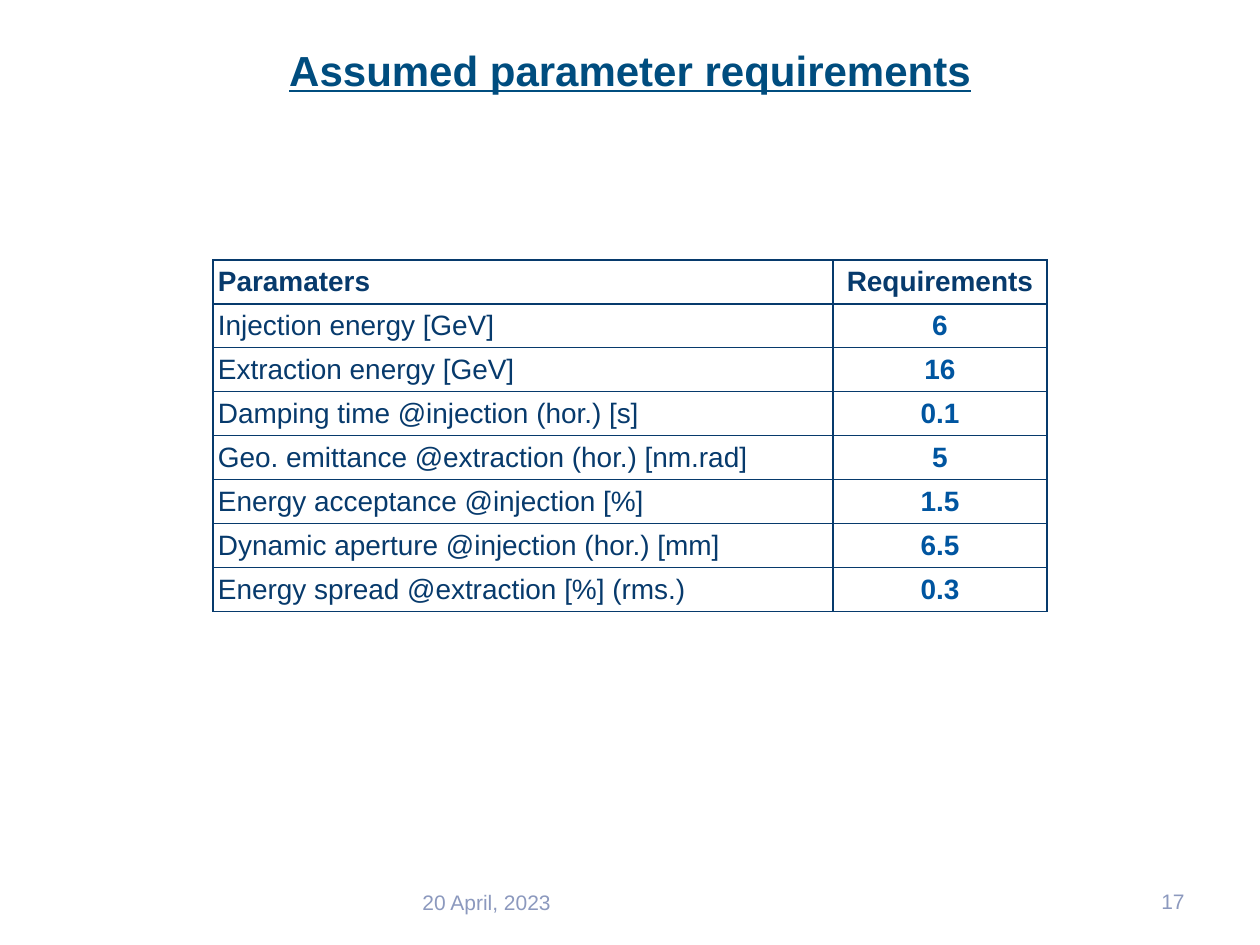
"""Build a slide with a table of assumed parameter requirements."""
from lxml.etree import SubElement
from pptx import Presentation
from pptx.dml.color import RGBColor
from pptx.enum.text import MSO_ANCHOR as Anchor, PP_ALIGN as Align
from pptx.oxml.ns import qn
from pptx.util import Emu, Pt

NAVY, BLUE, GREY = "073A6C", "0055A0", "8C99BE"


def px(n):
    return Emu(round(n * 914400 / 126))


def write(frame, text, size, color, align, bold=False):
    frame.vertical_anchor = Anchor.MIDDLE
    para = frame.paragraphs[0]
    para.alignment = align
    run = para.add_run()
    run.text = text
    font = run.font
    font.name, font.size, font.bold = "Arial", Pt(size), bold
    font.color.rgb = RGBColor.from_string(color)
    return font


deck = Presentation()
deck.slide_width, deck.slide_height = px(1260), px(945)
slide = deck.slides.add_slide(deck.slide_layouts[5])

title = slide.shapes.title
title.left, title.top, title.width, title.height = px(63), px(33), px(1134), px(73)
frame = title.text_frame
frame.margin_left = frame.margin_right = px(6)
frame.margin_top = frame.margin_bottom = px(6)
font = write(frame, "Assumed parameter requirements", 24, "004D7F", Align.CENTER, True)
font.underline = True

rows = [
    ("Paramaters", "Requirements"),
    ("Injection energy [GeV]", "6"),
    ("Extraction energy [GeV]", "16"),
    ("Damping time @injection (hor.) [s]", "0.1"),
    ("Geo. emittance @extraction (hor.) [nm.rad]", "5"),
    ("Energy acceptance @injection [%]", "1.5"),
    ("Dynamic aperture @injection (hor.) [mm]", "6.5"),
    ("Energy spread @extraction [%] (rms.)", "0.3"),
]
table = slide.shapes.add_table(len(rows), 2, px(213), px(260), px(834), px(44 * len(rows))).table
table.first_row = table.horz_banding = False
table.columns[0].width, table.columns[1].width = px(620), px(214)

for r, row in enumerate(rows):
    table.rows[r].height = px(44)
    for c, text in enumerate(row):
        cell = table.cell(r, c)
        cell.margin_left = cell.margin_right = px(5)
        cell.margin_top = cell.margin_bottom = px(5)
        cell.vertical_anchor = Anchor.MIDDLE
        props = cell._tc.get_or_add_tcPr()
        for side in ("lnL", "lnR", "lnT", "lnB"):
            line = SubElement(props, qn("a:" + side), w=str(Pt(0.75)))
            paint = SubElement(line, qn("a:solidFill"))
            SubElement(paint, qn("a:srgbClr"), val=NAVY)
        if r == 0:
            cell.fill.solid()
            cell.fill.fore_color.rgb = RGBColor.from_string("FFFFFF")
        else:
            cell.fill.background()
        color = BLUE if r and c else NAVY
        align = Align.CENTER if c else Align.LEFT
        write(cell.text_frame, text, 16, color, align, r == 0 or c == 1)

for text, left, top, width, align in [
    ("17", 1128, 876, 69, Align.RIGHT),
    ("20 April, 2023", 410, 877, 294, Align.LEFT),
]:
    box = slide.shapes.add_textbox(px(left), px(top), px(width), px(50))
    box.text_frame.word_wrap = True
    write(box.text_frame, text, 12, GREY, align)

deck.save("out.pptx")
